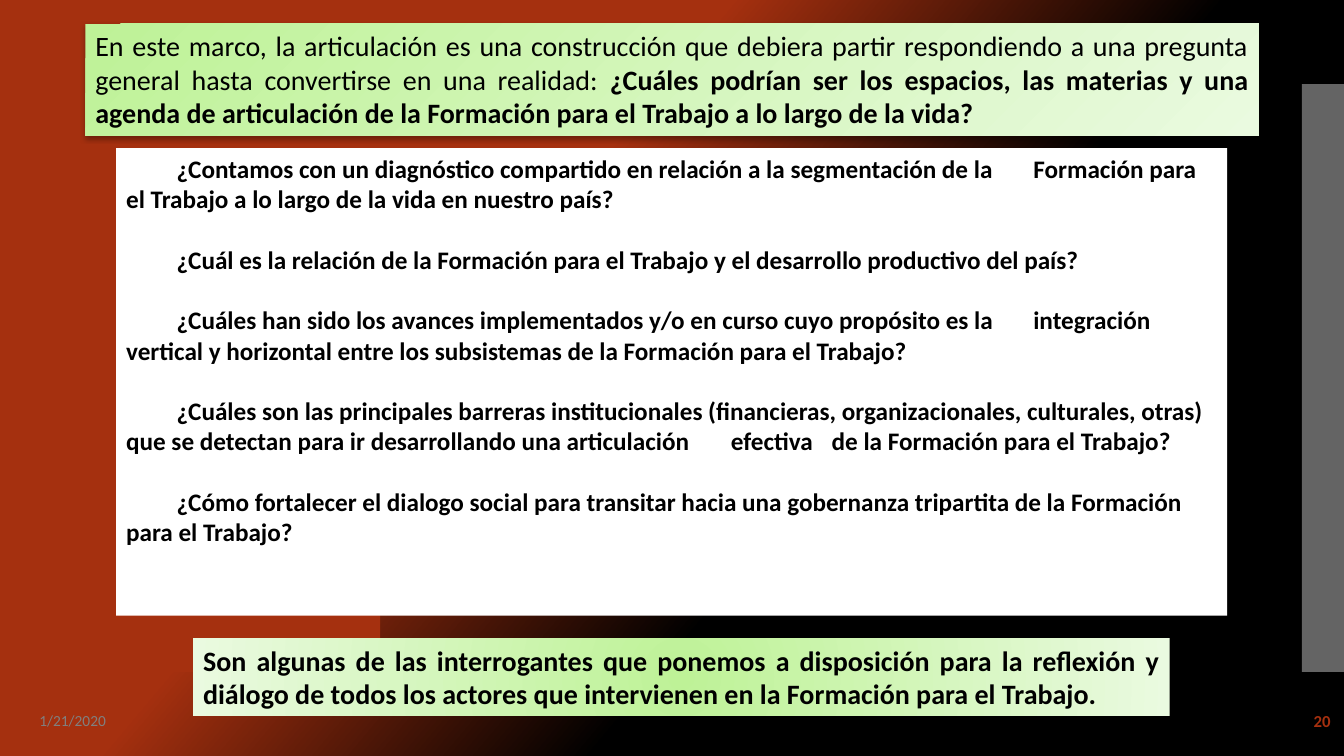
from lxml.etree import SubElement
from pptx import Presentation
from pptx.dml.color import RGBColor
from pptx.enum.shapes import MSO_SHAPE
from pptx.enum.text import MSO_ANCHOR, PP_ALIGN
from pptx.oxml.ns import qn
from pptx.util import Pt

RECT = MSO_SHAPE.RECTANGLE
TOP, MIDDLE = MSO_ANCHOR.TOP, MSO_ANCHOR.MIDDLE
LEFT, RIGHT, JUSTIFY = PP_ALIGN.LEFT, PP_ALIGN.RIGHT, PP_ALIGN.JUSTIFY

RUST = RGBColor(0xA5, 0x30, 0x0F)
BLACK = RGBColor(0, 0, 0)
WHITE = RGBColor(255, 255, 255)
SILVER = RGBColor(0xC8, 0xC8, 0xC8)
GREY = RGBColor(0x80, 0x80, 0x80)
GREEN = RGBColor(0xBE, 0xF2, 0x97)
PALE = RGBColor(0xEA, 0xFA, 0xE0)

WIDE, HIGH = 960, 540
INTRO = [
    ("En este marco, la articulación es una construcción que debiera partir respondiendo "
     "a una pregunta general hasta convertirse en una realidad: ", False),
    ("¿Cuáles podrían ser los espacios, las materias y una agenda de articulación de la "
     "Formación para el Trabajo a lo largo de la vida?", True),
]
ASKS = [
    "¿Contamos con un diagnóstico compartido en relación a la segmentación de la "
    "\tFormación para el Trabajo a lo largo de la vida en nuestro país?",
    "¿Cuál es la relación de la Formación para el Trabajo y el desarrollo productivo del país?",
    "¿Cuáles han sido los avances implementados y/o en curso cuyo propósito es la "
    "\tintegración vertical y horizontal entre los subsistemas de la Formación para el Trabajo?",
    "¿Cuáles son las principales barreras institucionales (financieras, organizacionales, "
    "culturales, otras) que se detectan para ir desarrollando una articulación "
    "\tefectiva \tde la Formación para el Trabajo?",
    "¿Cómo fortalecer el dialogo social para transitar hacia una gobernanza tripartita "
    "de la Formación para el Trabajo?",
]
CLOSE = ("Son algunas de las interrogantes que ponemos a disposición para la reflexión y "
         "diálogo de todos los actores que intervienen en la Formación para el Trabajo.")


def blend(fill, stops, angle):
    """Give a fill a linear gradient of two (position, colour) stops."""
    fill.gradient()
    fill.gradient_angle = angle
    for stop, (place, color) in zip(fill.gradient_stops, stops):
        stop.position = place
        stop.color.rgb = color


def add_rect(slide, box, color=None):
    """Add a plain rectangle without outline or shadow."""
    rect = slide.shapes.add_shape(RECT, *map(Pt, box))
    rect.shadow.inherit = False
    rect.line.fill.background()
    if color is not None:
        rect.fill.solid()
        rect.fill.fore_color.rgb = color
    return rect


def write(shape, paras, size, align=LEFT, color=BLACK, anchor=TOP, gap=0):
    """Write paragraphs, each a list of (text, bold) runs, into a shape."""
    frame = shape.text_frame
    frame.word_wrap = True
    frame.vertical_anchor = anchor
    for i, runs in enumerate(paras):
        para = frame.add_paragraph() if i else frame.paragraphs[0]
        para.alignment = align
        para.space_after = Pt(gap)
        para._p.get_or_add_pPr().set("defTabSz", str(Pt(36)))
        for text, bold in runs:
            run = para.add_run()
            run.text = text
            run.font.name = "Calibri"
            run.font.size = Pt(size)
            run.font.bold = bold
            run.font.color.rgb = color


def add_back(slide, box):
    """Paint the background and its two side bands."""
    left, top, width, height = box
    blend(slide.background.fill, [(0.37, RUST), (0.62, BLACK)], 320)
    add_rect(slide, (left, top + 60, 271.5, height - 120), RUST)
    band = add_rect(slide, (left + width - 30, top + 60, 30, height - 120), SILVER)
    tint = band._element.spPr.find(qn("a:solidFill"))[0]
    SubElement(tint, qn("a:alpha"), val="50000")


def add_intro(slide, box):
    """Add the opening panel with its diagonal gradient and soft shadow."""
    panel = add_rect(slide, box)
    blend(panel.fill, [(0, GREEN), (1, PALE)], 315)
    effects = panel._element.spPr.find(qn("a:effectLst"))
    shade = SubElement(effects, qn("a:outerShdw"), blurRad=str(Pt(3.5)),
                       dist=str(Pt(2.2)), dir="5400000", rotWithShape="0")
    tint = SubElement(shade, qn("a:srgbClr"), val=str(BLACK))
    SubElement(tint, qn("a:alpha"), val="32000")
    write(panel, [INTRO], 20, JUSTIFY)


def add_asks(slide, box):
    """Add the white panel of questions."""
    write(add_rect(slide, box, WHITE), [[("\t" + ask, True)] for ask in ASKS], 18, gap=21.7)


def add_close(slide, box):
    """Add the closing panel with a gradient spreading from its centre."""
    panel = add_rect(slide, box)
    blend(panel.fill, [(0, GREEN), (1, PALE)], 0)
    grad = panel._element.spPr.find(qn("a:gradFill"))
    grad.remove(grad.find(qn("a:lin")))
    ring = SubElement(grad, qn("a:path"), path="circle")
    SubElement(ring, qn("a:fillToRect"), l="50000", t="50000", r="50000", b="50000")
    write(panel, [[(CLOSE, True)]], 20, JUSTIFY)


def add_foot(slide, box):
    """Add the date at the left and the page number at the right."""
    left, top, width, height = box
    date = slide.shapes.add_textbox(*map(Pt, (left, top, 216, height)))
    write(date, [[("1/21/2020", False)]], 11, color=GREY, anchor=MIDDLE)
    page = slide.shapes.add_textbox(*map(Pt, (left + width - 120, top, 120, height)))
    write(page, [[("20", True)]], 12, RIGHT, RUST, MIDDLE)


def main():
    """Build the slide and save it."""
    deck = Presentation()
    deck.slide_width, deck.slide_height = Pt(WIDE), Pt(HIGH)
    slide = deck.slides.add_slide(deck.slide_layouts[6])
    add_back(slide, (0, 0, WIDE, HIGH))
    add_intro(slide, (61, 17, 838, 80))
    add_asks(slide, (83, 105.8, 793.5, 334))
    add_close(slide, (138, 455.8, 697.5, 55.5))
    add_foot(slide, (21, 500.5, 936.5, 28.8))
    deck.save("out.pptx")


if __name__ == "__main__":
    main()
